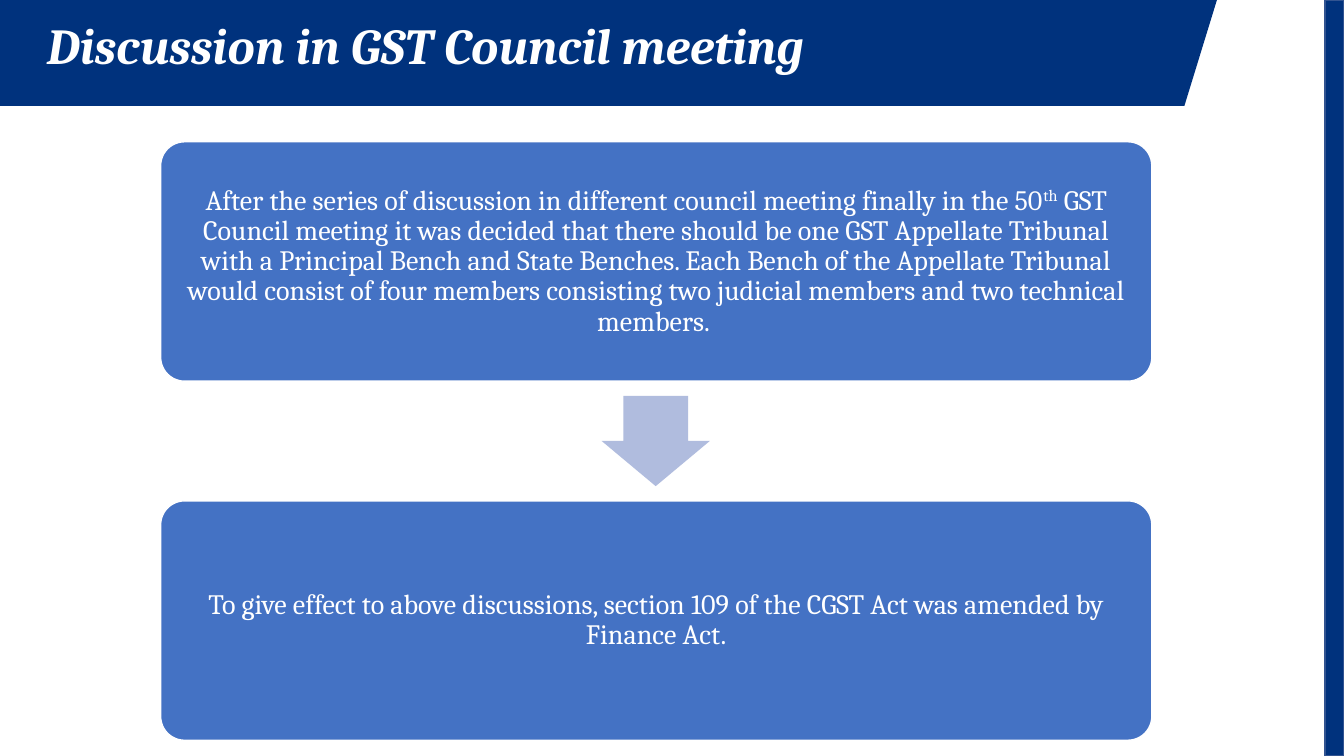
from pptx import Presentation
from pptx.dml.color import RGBColor
from pptx.enum.shapes import MSO_SHAPE as Shape
from pptx.enum.text import MSO_ANCHOR as Anchor, PP_ALIGN as Align
from pptx.util import Pt

PX = 9525
WIDE, HIGH = 1280, 720
NAVY, BLUE, PALE, WHITE = "00327D", "4472C4", "B0BCDE", "FFFFFF"
STEPS = [
    [("After the series of discussion in different council meeting "
      "finally in the 50", False),
     ("th", True),
     (" GST Council meeting it was decided that there should be one GST "
      "Appellate Tribunal with a Principal Bench and State Benches. Each "
      "Bench of the Appellate Tribunal would consist of four members "
      "consisting two judicial members and two technical members. ", False)],
    [("To give effect to above discussions, section 109 of the CGST Act "
      "was amended by Finance Act.", False)],
]


def px(*sizes):
    return [size * PX for size in sizes]


def paint(target, color):
    """Give a fill or line format one solid colour."""
    fill = getattr(target, "fill", target)
    fill.solid()
    fill.fore_color.rgb = RGBColor.from_string(color)


def style(para, size, align):
    para.alignment = align
    para.line_spacing = 0.9
    font = para.font
    font.name, font.size = "Cambria", Pt(size)
    font.color.rgb = RGBColor.from_string(WHITE)
    return font


def add_block(slide, kind, box, color, edge=None):
    """Add a flat preset shape, outlined only if an edge colour is given."""
    block = slide.shapes.add_shape(kind, *px(*box))
    block.shadow.inherit = False
    paint(block.fill, color)
    if edge:
        paint(block.line, edge)
        block.line.width = Pt(1)
    else:
        block.line.fill.background()
    return block


def add_head(slide, box):
    left, top, width, height = box
    slant = 31
    pen = slide.shapes.build_freeform(left, top, scale=PX)
    pen.add_line_segments([
        (left, top + height), (left + width - slant, top + height),
        (left + width, top)])
    band = pen.convert_to_shape()
    band.shadow.inherit = False
    paint(band.fill, NAVY)
    band.line.fill.background()

    title = slide.shapes.title
    slide.shapes.element.append(title.element)
    title.left, title.top, title.width, title.height = px(
        left + 35, top + 15, 882, 61)
    frame = title.text_frame
    frame.text = "Discussion in GST Council meeting"
    frame.word_wrap = True
    frame.vertical_anchor = Anchor.MIDDLE
    font = style(frame.paragraphs[0], 36, Align.LEFT)
    font.bold = font.italic = True


def add_step(slide, box, runs):
    card = add_block(slide, Shape.ROUNDED_RECTANGLE, box, BLUE, WHITE)
    card.adjustments[0] = 0.1
    frame = card.text_frame
    frame.word_wrap = True
    frame.vertical_anchor = Anchor.MIDDLE
    frame.margin_left = frame.margin_right = 8 * PX
    frame.margin_top = frame.margin_bottom = 8 * PX
    para = frame.paragraphs[0]
    style(para, 20, Align.CENTER)
    for text, raised in runs:
        run = para.add_run()
        run.text = text
        if raised:
            run.font._element.set("baseline", "30000")


def add_flow(slide, box):
    """Stack the steps evenly in the box, with an arrow in each gap."""
    left, top, width, height = box
    gap, wide, high = 114, 103, 86
    tall = (height - gap * (len(STEPS) - 1)) // len(STEPS)
    for i, runs in enumerate(STEPS):
        y = top + i * (tall + gap)
        if i:
            spot = (left + (width - wide) // 2, y - (gap + high) // 2,
                    wide, high)
            arrow = add_block(slide, Shape.DOWN_ARROW, spot, PALE)
            arrow.adjustments[0] = 0.6
            arrow.adjustments[1] = 0.5
        add_step(slide, (left, y, width, tall), runs)


def main():
    deck = Presentation()
    deck.slide_width, deck.slide_height = px(WIDE, HIGH)
    slide = deck.slides.add_slide(deck.slide_layouts[5])
    add_head(slide, (0, 0, 1159, 101))
    add_block(slide, Shape.RECTANGLE, (WIDE - 18, 0, 18, HIGH), NAVY, "325491")
    add_flow(slide, (153, 135, 944, 570))
    deck.save("out.pptx")


if __name__ == "__main__":
    main()
